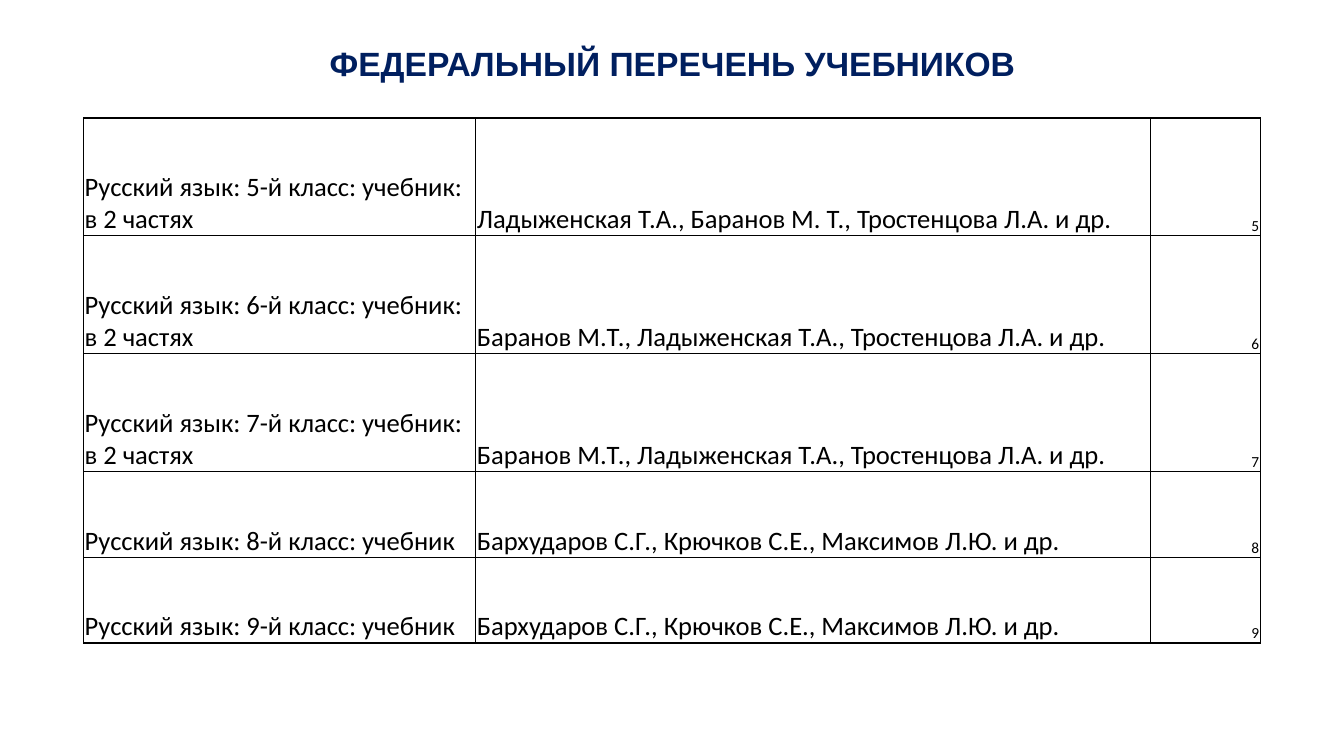
from typing import NamedTuple

from lxml import etree
from pptx import Presentation
from pptx.dml.color import RGBColor
from pptx.enum.text import MSO_ANCHOR, MSO_AUTO_SIZE, PP_ALIGN
from pptx.oxml.ns import qn
from pptx.util import Emu, Pt

TOP, BOTTOM = MSO_ANCHOR.TOP, MSO_ANCHOR.BOTTOM
LEFT, CENTER, RIGHT = PP_ALIGN.LEFT, PP_ALIGN.CENTER, PP_ALIGN.RIGHT
NO_AUTOFIT = MSO_AUTO_SIZE.NONE
TITLE_ONLY = 5
EMU_PER_PX = 9144  # 100 px to the inch
COLORS = {"heading": "001F5F", "text": "000000", "border": "000000"}


class Column(NamedTuple):
    width: int
    size: int
    align: PP_ALIGN


class Textbook(NamedTuple):
    name: str
    authors: str
    grade: str
    height: int


COLUMNS = [Column(389, 19, LEFT), Column(669, 19, LEFT), Column(109, 11, RIGHT)]
BARANOV = "Баранов М.Т., Ладыженская Т.А., Тростенцова Л.А. и др."
BARKHUDAROV = "Бархударов С.Г., Крючков С.Е., Максимов Л.Ю. и др."
TEXTBOOKS = [
    Textbook("Русский язык: 5-й класс: учебник: в 2 частях",
             "Ладыженская Т.А., Баранов М. Т., Тростенцова Л.А. и др.", "5", 117),
    Textbook("Русский язык: 6-й класс: учебник: в 2 частях", BARANOV, "6", 117),
    Textbook("Русский язык: 7-й класс: учебник: в 2 частях", BARANOV, "7", 117),
    Textbook("Русский язык: 8-й класс: учебник", BARKHUDAROV, "8", 85),
    Textbook("Русский язык: 9-й класс: учебник", BARKHUDAROV, "9", 85),
]


def px(length: int) -> Emu:
    return Emu(length * EMU_PER_PX)


def format_text(paragraph, align: PP_ALIGN, font_name: str, size: int,
                color: str, bold: bool = False) -> None:
    paragraph.alignment = align
    for run in paragraph.runs:
        run.font.name = font_name
        run.font.size = Pt(size)
        run.font.bold = bold
        run.font.color.rgb = RGBColor.from_string(COLORS[color])


def add_borders(cell) -> None:
    properties = cell._tc.get_or_add_tcPr()
    for side in ("a:lnL", "a:lnR", "a:lnT", "a:lnB"):
        line = etree.SubElement(properties, qn(side), w=str(Pt(1)))
        fill = etree.SubElement(line, qn("a:solidFill"))
        etree.SubElement(fill, qn("a:srgbClr"), val=COLORS["border"])


def fill_cell(cell, text: str, column: Column) -> None:
    cell.text_frame.text = text
    cell.vertical_anchor = BOTTOM
    cell.margin_left = cell.margin_right = cell.margin_top = px(1)
    cell.margin_bottom = 0
    add_borders(cell)
    cell.fill.background()
    format_text(cell.text_frame.paragraphs[0], column.align, "Calibri",
                column.size, "text")


def add_heading(slide) -> None:
    heading = slide.shapes.title
    heading.left, heading.top = px(29), px(43)
    heading.width, heading.height = px(1276), px(101)
    frame = heading.text_frame
    frame.text = "ФЕДЕРАЛЬНЫЙ ПЕРЕЧЕНЬ УЧЕБНИКОВ"
    frame.margin_left = frame.margin_right = 0
    frame.margin_top = frame.margin_bottom = 0
    frame.vertical_anchor = TOP
    frame.auto_size = NO_AUTOFIT
    format_text(frame.paragraphs[0], CENTER, "Arial", 24, "heading", bold=True)


def add_textbooks(slide) -> None:
    width = sum(column.width for column in COLUMNS)
    height = sum(book.height for book in TEXTBOOKS)
    table = slide.shapes.add_table(len(TEXTBOOKS), len(COLUMNS), px(83), px(117),
                                   px(width), px(height)).table
    table.first_row = table.horz_banding = False
    for index, column in enumerate(COLUMNS):
        table.columns[index].width = px(column.width)
    for row, book in zip(table.rows, TEXTBOOKS):
        row.height = px(book.height)
        texts = (book.name, book.authors, book.grade)
        for cell, text, column in zip(row.cells, texts, COLUMNS):
            fill_cell(cell, text, column)


def main() -> None:
    presentation = Presentation()
    presentation.slide_width, presentation.slide_height = px(1333), px(750)
    slide = presentation.slides.add_slide(presentation.slide_layouts[TITLE_ONLY])
    # Heading
    add_heading(slide)
    # Table of textbooks
    add_textbooks(slide)
    presentation.save("out.pptx")


if __name__ == "__main__":
    main()
